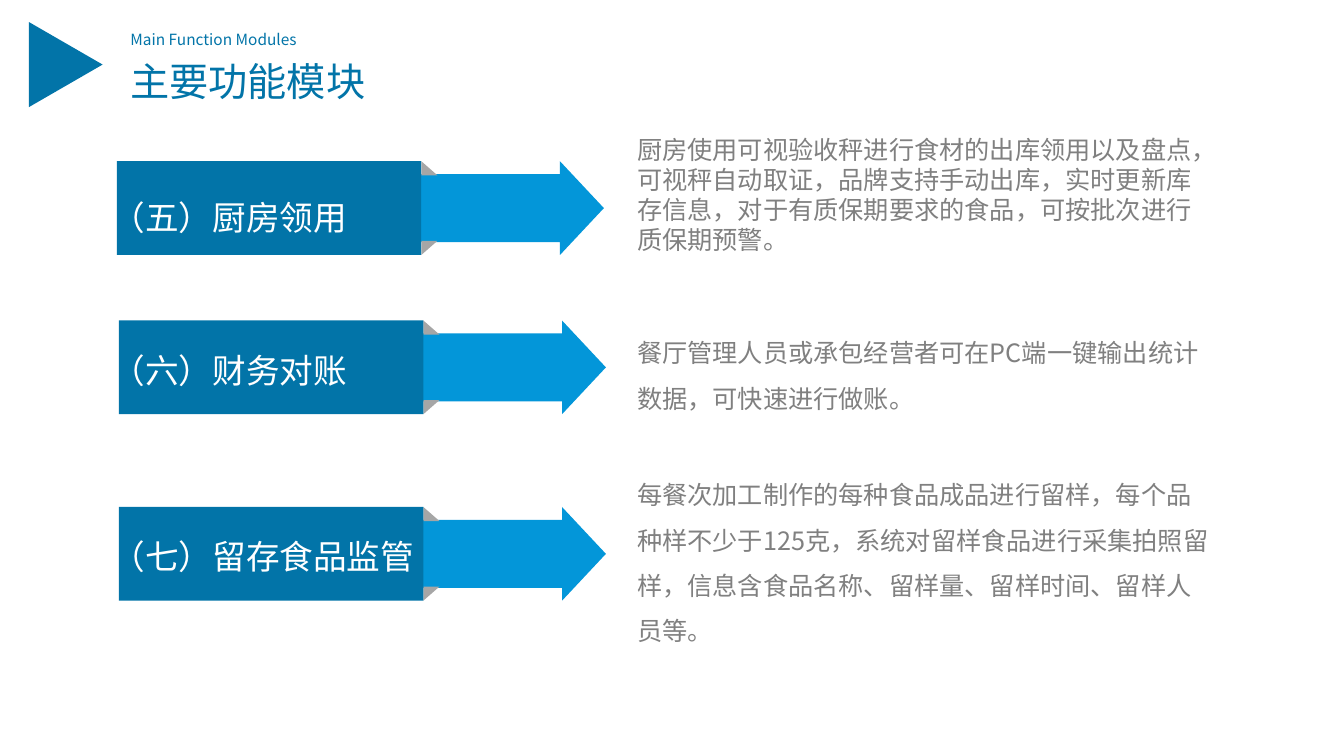
import pptx
import pptx.util
import pptx.dml.color
import pptx.enum.shapes
import pptx.enum.text
import pptx.oxml.ns
import lxml.etree
from dataclasses import dataclass

SHAPE = pptx.enum.shapes.MSO_SHAPE
inches = pptx.util.Inches


@dataclass(frozen=True)
class Theme:
    font: str = "Noto Sans CJK SC"
    primary: str = "0274A8"
    arrow: str = "0396D9"
    fold: str = "A6A6A6"
    body: str = "808080"
    light: str = "FFFFFF"
    title_size: int = 28
    label_size: int = 24
    body_size: int = 18
    caption_size: int = 11


@dataclass(frozen=True)
class Box:
    left: float
    top: float
    width: float
    height: float

    def share(self, x, y, w, h):
        """Return the inner box given as shares of this one."""
        return Box(self.left + x * self.width, self.top + y * self.height,
                   w * self.width, h * self.height)

    def emu(self):
        return [inches(n) for n in (self.left, self.top, self.width, self.height)]


THEME = Theme()
WIDTH, HEIGHT = 13.33, 7.5


def rgb(color):
    return pptx.dml.color.RGBColor.from_string(color)


def add_block(shapes, preset, box, color):
    block = shapes.add_shape(preset, *box.emu())
    block.shadow.inherit = False
    block.fill.solid()
    block.fill.fore_color.rgb = rgb(color)
    block.line.fill.background()
    return block


def add_text(shapes, text, box, size, color, wrap=True, spacing=None):
    frame = shapes.add_textbox(*box.emu()).text_frame
    frame.word_wrap = wrap
    frame.auto_size = pptx.enum.text.MSO_AUTO_SIZE.SHAPE_TO_FIT_TEXT
    paragraph = frame.paragraphs[0]
    paragraph.text = text
    paragraph.line_spacing = spacing
    font = paragraph.font
    font.name, font.size = THEME.font, pptx.util.Pt(size)
    font.color.rgb = rgb(color)
    # East Asian characters take the same typeface
    east_asian = lxml.etree.SubElement(font._element, pptx.oxml.ns.qn("a:ea"))
    east_asian.set("typeface", THEME.font)


def add_header(slide, box):
    shapes = slide.shapes.add_group_shape().shapes
    add_text(shapes, "主要功能模块", box.share(0.24, 0.32, 0.63, 0.67),
             THEME.title_size, THEME.primary, wrap=False)
    add_text(shapes, "Main Function Modules", box.share(0.24, 0, 0.76, 0.33),
             THEME.caption_size, THEME.primary)
    # Marker: an upright triangle turned to point right
    marker = add_block(shapes, SHAPE.ISOSCELES_TRIANGLE,
                       box.share(0, 0.03, 0.21, 0.86), THEME.primary)
    marker.rotation = 90


def add_banner(slide, box):
    shapes = slide.shapes.add_group_shape().shapes
    arrow = add_block(shapes, SHAPE.RIGHT_ARROW, box.share(0.38, 0, 0.62, 1), THEME.arrow)
    arrow.adjustments[0], arrow.adjustments[1] = 0.726, 0.468
    # Folded corners below and above the arrow shaft
    for y, flipped in ((0.85, True), (0, False)):
        fold = add_block(shapes, SHAPE.RIGHT_TRIANGLE, box.share(0.625, y, 0.033, 0.15),
                         THEME.fold)
        if flipped:
            fold._element.spPr.xfrm.set("flipV", "1")
    add_block(shapes, SHAPE.RECTANGLE, box.share(0, 0, 0.625, 1), THEME.primary)


def add_module(slide, box, label, label_drop, description, description_box, spacing):
    add_banner(slide, box)
    add_text(slide.shapes, label, Box(1.01, box.top + label_drop, 3.23, 0.5),
             THEME.label_size, THEME.light)
    add_text(slide.shapes, description, description_box,
             THEME.body_size, THEME.body, spacing=spacing)


# Banner left and top, label, label drop, description, its top, width, height, spacing
MODULES = [
    (1.16, 1.60, "（五）厨房领用", 0.30,
     "厨房使用可视验收秤进行食材的出库领用以及盘点，可视秤自动取证，品牌支持手动出库，"
     "实时更新库存信息，对于有质保期要求的食品，可按批次进行质保期预警。",
     1.28, 5.77, 1.61, None),
    (1.18, 3.18, "（六）财务对账", 0.24,
     "餐厅管理人员或承包经营者可在PC端一键输出统计数据，可快速进行做账。",
     3.15, 5.92, 1.01, 1.5),
    (1.18, 5.03, "（七）留存食品监管", 0.24,
     "每餐次加工制作的每种食品成品进行留样，每个品种样不少于125克，系统对留样食品进行采集拍照留样，"
     "信息含食品名称、留样量、留样时间、留样人员等。",
     4.56, 5.92, 1.92, 1.5),
]


def main():
    deck = pptx.Presentation()
    deck.slide_width, deck.slide_height = inches(WIDTH), inches(HEIGHT)
    slide = deck.slides.add_slide(deck.slide_layouts[6])
    add_header(slide, Box(0.23, 0.25, 4.02, 0.85))
    for left, top, label, drop, description, text_top, width, height, spacing in MODULES:
        add_module(slide, Box(left, top, 4.83, 0.93), label, drop, description,
                   Box(6.22, text_top, width, height), spacing)
    deck.save("out.pptx")


if __name__ == "__main__":
    main()
